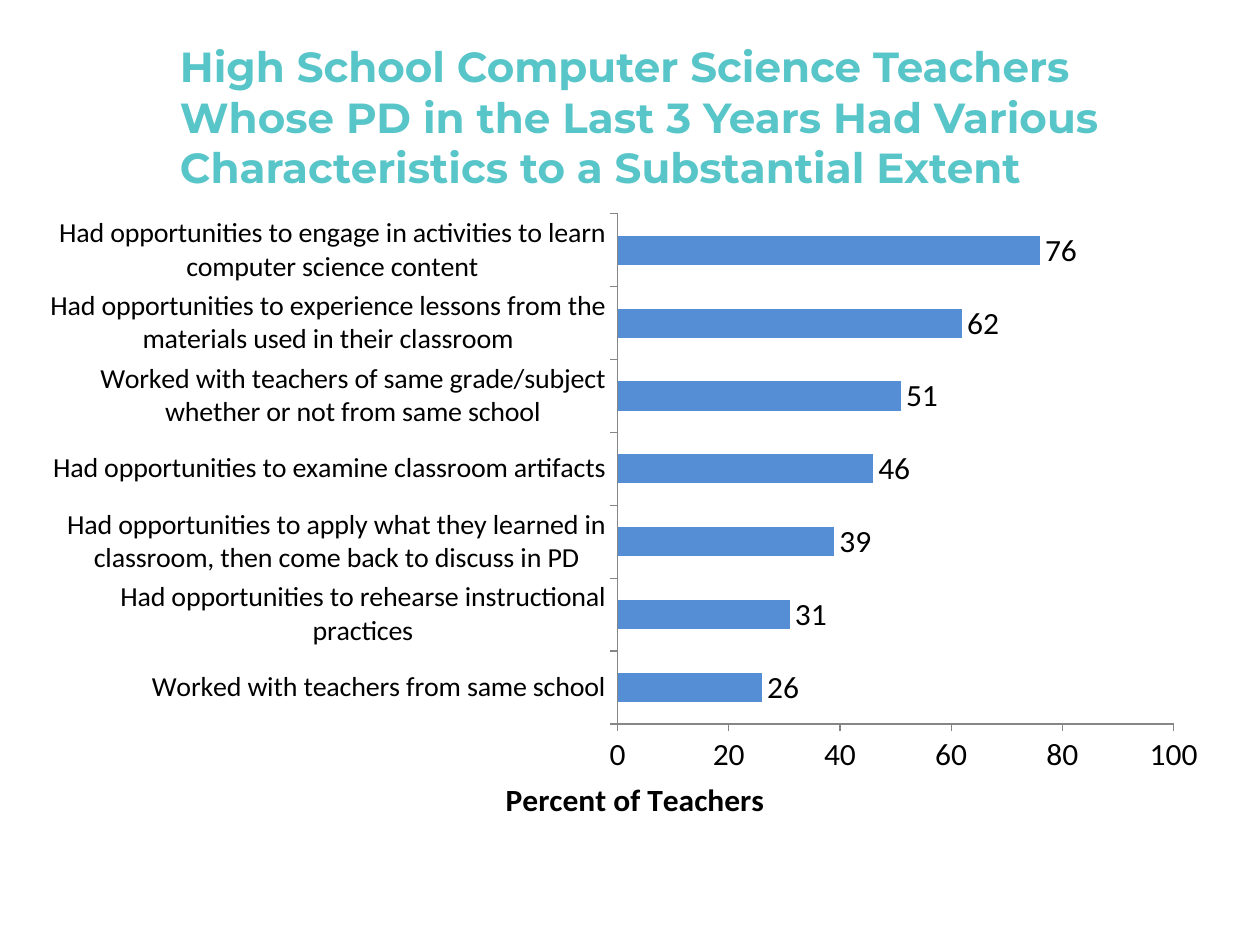
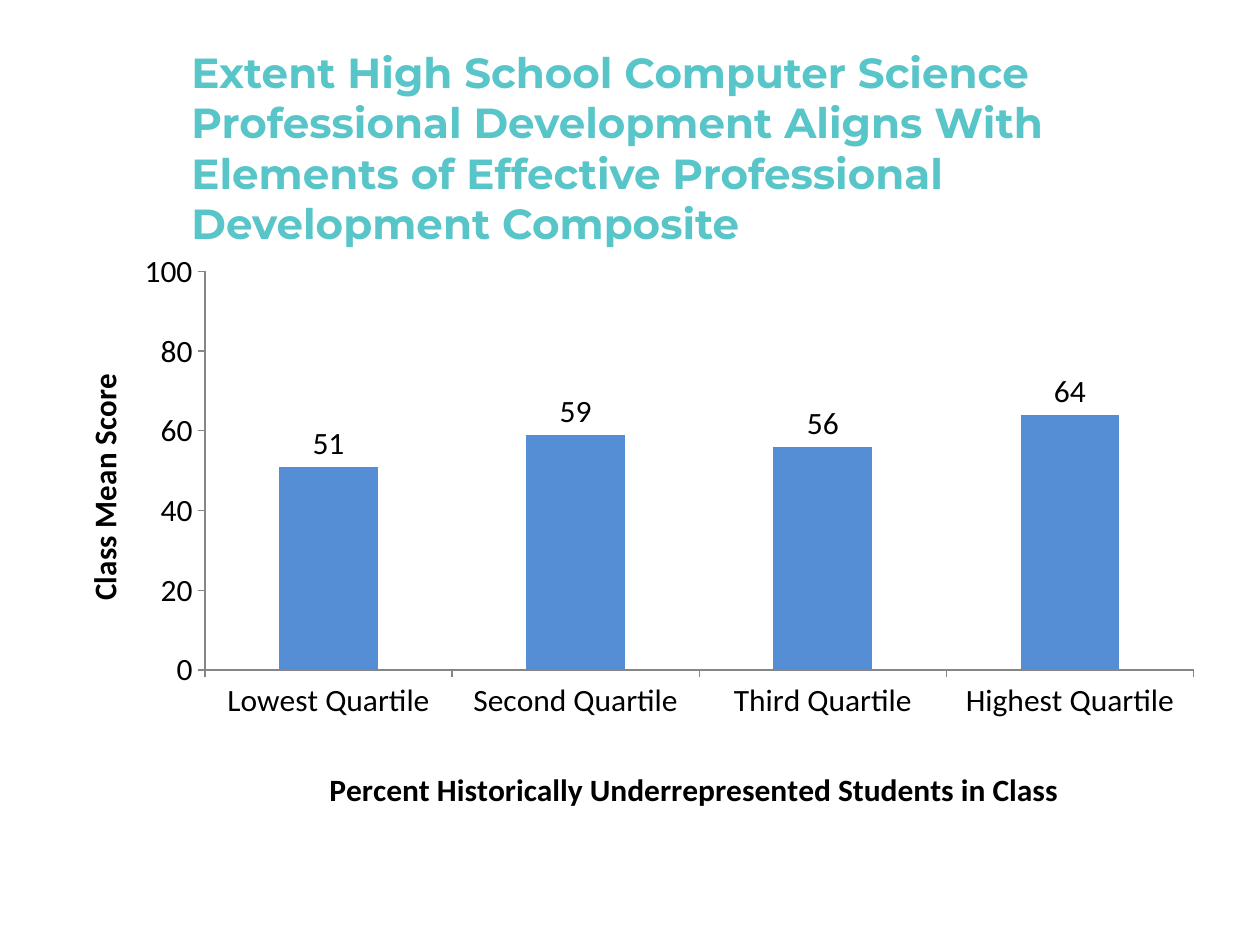
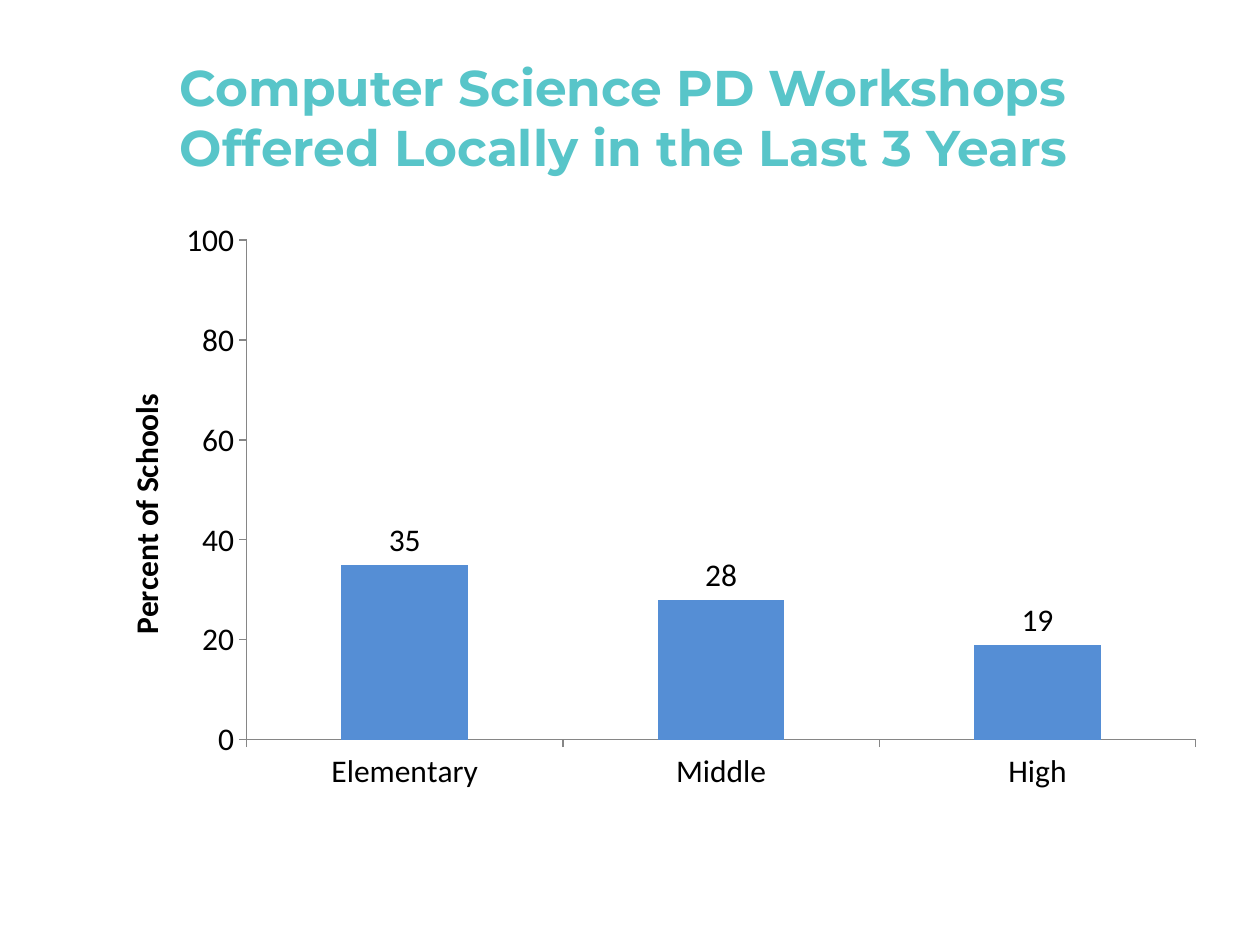
from lxml import etree
from pptx import Presentation
from pptx.chart.data import CategoryChartData
from pptx.dml.color import RGBColor
from pptx.enum.chart import XL_CHART_TYPE, XL_LABEL_POSITION, XL_TICK_MARK
from pptx.enum.text import MSO_ANCHOR
from pptx.oxml.ns import qn
from pptx.util import Inches, Pt

BAR = XL_CHART_TYPE.BAR_CLUSTERED
COLUMN = XL_CHART_TYPE.COLUMN_CLUSTERED
OUTSIDE_END = XL_LABEL_POSITION.OUTSIDE_END
TICK_OUT = XL_TICK_MARK.OUTSIDE
TICK_NONE = XL_TICK_MARK.NONE
MIDDLE = MSO_ANCHOR.MIDDLE

TITLE_FONT, CHART_FONT = "Montserrat", "Calibri"
TEAL, BLUE, BLACK, GRAY = "58C5C9", "558ED5", "000000", "868686"

PD_CHARACTERISTICS = {
    "Worked with teachers from same school": 26,
    "Had opportunities to rehearse instructional practices": 31,
    "Had opportunities to apply what they learned in classroom, "
    "then come back to discuss in PD": 39,
    "Had opportunities to examine classroom artifacts": 46,
    "Worked with teachers of same grade/subject whether or not from same school": 51,
    "Had opportunities to experience lessons from the materials "
    "used in their classroom": 62,
    "Had opportunities to engage in activities to learn computer science content": 76,
}
QUARTILE_SCORES = {
    "Lowest Quartile": 51,
    "Second Quartile": 59,
    "Third Quartile": 56,
    "Highest Quartile": 64,
}
SCHOOLS_WITH_WORKSHOPS = {"Elementary": 35, "Middle": 28, "High": 19}


def color(hex_value):
    return RGBColor.from_string(hex_value)


def style_font(font, name, size, hex_value, bold=False):
    font.name = name
    font.size = Pt(size)
    font.bold = bold
    font.color.rgb = color(hex_value)


def add_title(slide, text, box, size=24):
    frame = slide.shapes.add_textbox(*map(Inches, box)).text_frame
    frame.word_wrap = True
    frame.vertical_anchor = MIDDLE
    run = frame.paragraphs[0].add_run()
    run.text = text
    style_font(run.font, TITLE_FONT, size, TEAL, bold=True)


def set_layout(parent, index, **fractions):
    """Place a chart part by hand, in fractions of the chart's size."""
    for old in parent.findall(qn("c:layout")):
        parent.remove(old)
    layout = etree.Element(qn("c:layout"))
    parent.insert(index, layout)
    manual = etree.SubElement(layout, qn("c:manualLayout"))
    if "w" in fractions:
        etree.SubElement(manual, qn("c:layoutTarget")).set("val", "inner")
    for side in ("xMode", "yMode"):
        etree.SubElement(manual, qn(f"c:{side}")).set("val", "edge")
    for key, value in fractions.items():
        etree.SubElement(manual, qn(f"c:{key}")).set("val", str(value))


def add_axis_title(axis, text, x, y, upright=False):
    title = axis.axis_title
    frame = title.text_frame
    run = frame.paragraphs[0].add_run()
    run.text = text
    style_font(run.font, CHART_FONT, 18, BLACK, bold=True)
    body = frame._txBody.find(qn("a:bodyPr"))
    body.set("rot", "-5400000" if upright else "0")
    body.set("vert", "horz")
    set_layout(title._element, 1, x=x, y=y)


def style_axis(axis, size=18):
    axis.has_major_gridlines = False
    axis.major_tick_mark = TICK_OUT
    axis.minor_tick_mark = TICK_NONE
    axis.format.line.color.rgb = color(GRAY)
    axis.format.line.width = Pt(0.75)
    style_font(axis.tick_labels.font, CHART_FONT, size, BLACK)


def add_percent_chart(slide, kind, values, box, plot_area, category_size=18):
    """Add a single-series bar chart with a 0 to 100 scale."""
    data = CategoryChartData()
    data.categories = list(values)
    data.add_series("Series 1", list(values.values()))
    chart = slide.shapes.add_chart(kind, *map(Inches, box), data).chart
    chart.has_legend = False
    chart.has_title = False
    style_font(chart.font, CHART_FONT, 18, BLACK)

    style_axis(chart.category_axis, category_size)
    scale = chart.value_axis
    style_axis(scale)
    scale.minimum_scale, scale.maximum_scale, scale.major_unit = 0, 100, 20

    plot = chart.plots[0]
    plot.gap_width = 150
    plot.vary_by_categories = False
    fill = plot.series[0].format.fill
    fill.solid()
    fill.fore_color.rgb = color(BLUE)
    plot.has_data_labels = True
    labels = plot.data_labels
    labels.show_value = True
    labels.position = OUTSIDE_END
    style_font(labels.font, CHART_FONT, 18, BLACK)

    set_layout(chart._chartSpace.chart.plotArea, 0, **dict(zip("xywh", plot_area)))
    return chart


def add_characteristics_slide(slide):
    chart = add_percent_chart(slide, BAR, PD_CHARACTERISTICS, (0.33, 1.55, 9.33, 5.03),
                              (0.49, 0.03, 0.473, 0.821), category_size=16)
    add_axis_title(chart.value_axis, "Percent of Teachers", 0.39, 0.93)
    add_title(slide, "High School Computer Science Teachers Whose PD in the Last 3 Years "
              "Had Various Characteristics to a Substantial Extent",
              (1.33, 0.3, 8.17, 1.25))


def add_composite_slide(slide):
    add_title(slide, "Extent High School Computer Science Professional Development Aligns "
              "With Elements of Effective Professional Development Composite",
              (1.42, 0.37, 8.08, 1.6))
    chart = add_percent_chart(slide, COLUMN, QUARTILE_SCORES, (0.33, 1.92, 9.33, 4.58),
                              (0.139, 0.052, 0.841, 0.704))
    add_axis_title(chart.category_axis,
                   "Percent Historically Underrepresented Students in Class", 0.24, 0.92)
    add_axis_title(chart.value_axis, "Class Mean Score", 0.03, 0.23, upright=True)


def add_workshops_slide(slide):
    chart = add_percent_chart(slide, COLUMN, SCHOOLS_WITH_WORKSHOPS, (0.67, 1.67, 9, 4.7),
                              (0.143, 0.05, 0.837, 0.844))
    add_axis_title(chart.value_axis, "Percent of Schools", 0.03, 0.3, upright=True)
    add_title(slide, "Computer Science PD Workshops Offered Locally in the Last 3 Years",
              (1.33, 0.3, 8.17, 1.25), size=28.7)


def main():
    deck = Presentation()
    deck.slide_width, deck.slide_height = Inches(10), Inches(7.5)
    blank = deck.slide_layouts[6]
    for fill_slide in (add_characteristics_slide, add_composite_slide, add_workshops_slide):
        fill_slide(deck.slides.add_slide(blank))
    deck.save("out.pptx")


if __name__ == "__main__":
    main()
